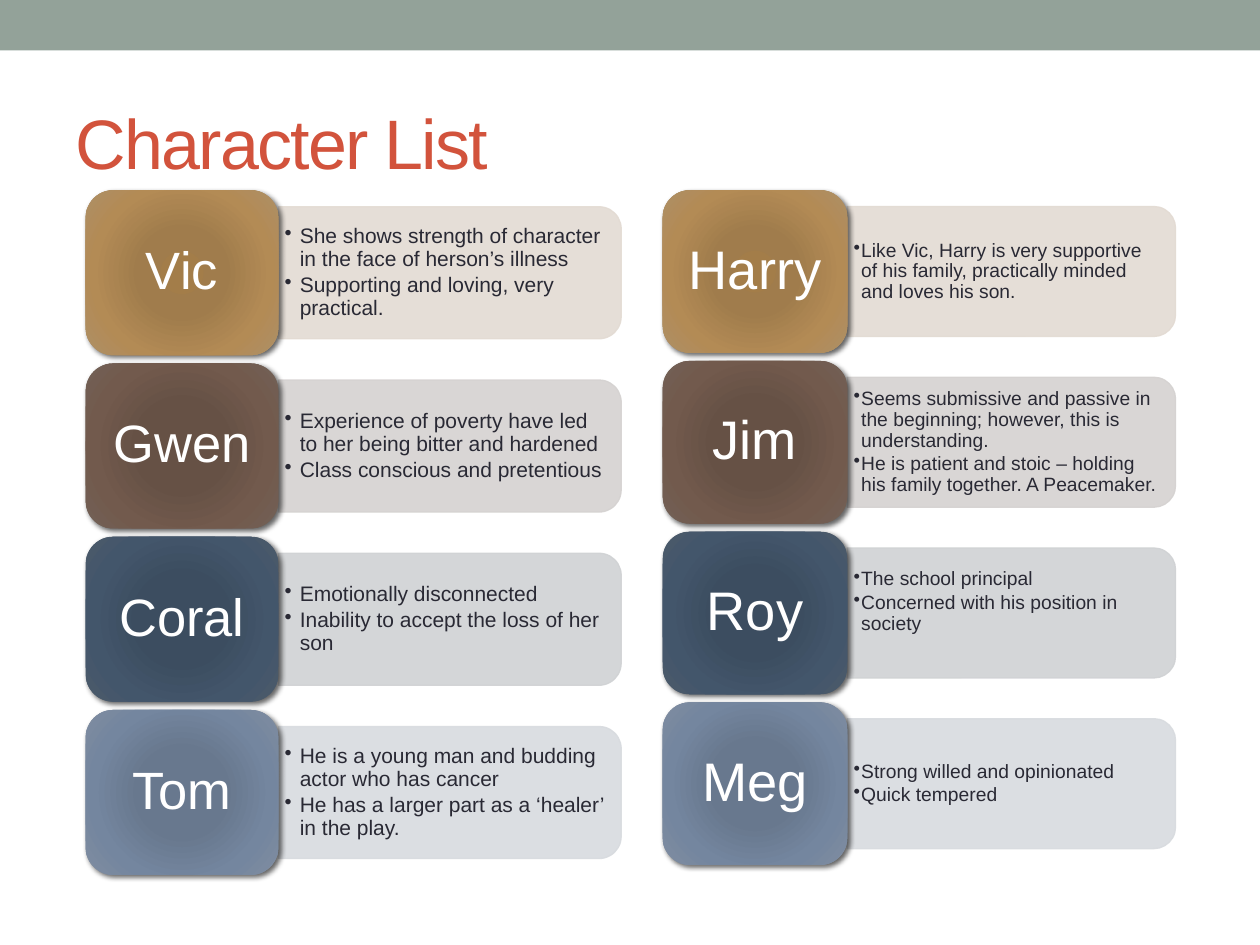
from lxml.etree import SubElement
from pptx import Presentation
from pptx.dml.color import RGBColor
from pptx.enum.shapes import MSO_SHAPE
from pptx.enum.text import MSO_ANCHOR, PP_ALIGN
from pptx.oxml import parse_xml
from pptx.oxml.ns import nsdecls, qn
from pptx.util import Inches, Pt

FONT = "Arial"
COLORS = {"band": "93A299", "title": "D2533C", "body": "292934",
          "name": "FFFFFF", "shadow": "000000"}
# One pair per row: panel colour, then the card's gradient from the centre out
ROWS = [
    ("E3DBD3", ("A37D49", "A07C4C", "B38B55", "AD8F67")),
    ("D5D2D1", ("685044", "665145", "725A4D", "726056")),
    ("D0D2D4", ("3B4D61", "3C4D60", "43566B", "4C5A6A")),
    ("D8DBDF", ("677790", "68788E", "74869F", "808DA0")),
]
STOPS = (0, 34, 70, 100)
CARD_SHARE = 0.36      # card width within a column
ROW_GAP = 1.05         # row pitch in card heights
PANEL_SHARE = 0.8      # panel height in card heights
GRID_TOP = 1.51

# Each column: its geometry, its type sizes and its characters
COLUMNS = [
    dict(left=0.68, width=4.25, pitch=1.375, name_size=30, body_size=12,
         indent=0.12, gap=2, people=[
             ("Vic", ["She shows strength of character in the face of herson’s illness",
                      "Supporting and loving, very practical."]),
             ("Gwen", ["Experience of poverty have led to her being bitter and hardened",
                       "Class conscious and pretentious"]),
             ("Coral", ["Emotionally disconnected",
                        "Inability to accept the loss of her son"]),
             ("Tom", ["He is a young man and budding actor who has cancer",
                      "He has a larger part as a ‘healer’ in the play."]),
         ]),
    dict(left=5.26, width=4.07, pitch=1.355, name_size=31, body_size=11,
         indent=0.06, gap=1.5, people=[
             ("Harry", ["Like Vic, Harry is very supportive of his family, "
                        "practically minded and loves his son."]),
             ("Jim", ["Seems submissive and passive in the beginning; however, "
                      "this is understanding.",
                      "He is patient and stoic – holding his family together. A Peacemaker."]),
             ("Roy", ["The school principal", "Concerned with his position in society"]),
             ("Meg", ["Strong willed and opinionated", "Quick tempered"]),
         ]),
]
RAISED = {"Roy": 0.18}  # extra bottom inset that lifts the text


def write(shape, lines, *, size, color, align=PP_ALIGN.LEFT, insets=(0.1, 0.05, 0.1, 0.05),
          spacing=None, gap=0, indent=None, tracking=None):
    """Fill a shape with paragraphs; an indent makes them bullets."""
    frame = shape.text_frame
    frame.word_wrap = True
    frame.vertical_anchor = MSO_ANCHOR.MIDDLE
    (frame.margin_left, frame.margin_top,
     frame.margin_right, frame.margin_bottom) = map(Inches, insets)
    for i, line in enumerate(lines):
        paragraph = frame.paragraphs[0] if i == 0 else frame.add_paragraph()
        paragraph.alignment = align
        paragraph.space_after = Pt(gap)
        if spacing:
            paragraph.line_spacing = spacing
        run = paragraph.add_run()
        run.text = line
        run.font.name, run.font.size = FONT, Pt(size)
        run.font.color.rgb = RGBColor.from_string(COLORS[color])
        if tracking:
            run._r.get_or_add_rPr().set("spc", str(tracking * 100))
        if indent:
            properties = paragraph._p.get_or_add_pPr()
            properties.set("marL", str(Inches(indent)))
            properties.set("indent", str(-Inches(indent)))
            SubElement(properties, qn("a:buChar")).set("char", "•")


def add_block(slide, kind, left, top, width, height):
    block = slide.shapes.add_shape(kind, *map(Inches, (left, top, width, height)))
    block.shadow.inherit = False
    block.line.fill.background()
    return block


def add_text(slide, left, top, width, height, lines, **style):
    box = slide.shapes.add_textbox(*map(Inches, (left, top, width, height)))
    write(box, lines, **style)


def add_panel(slide, left, middle, width, height, color):
    """A bar rounded on its right side: a top-rounded shape turned by 90°."""
    panel = add_block(slide, MSO_SHAPE.ROUND_2_SAME_RECTANGLE,
                      left + (width - height) / 2, middle - width / 2, height, width)
    panel.rotation = 90
    panel.line.width = Pt(0.75)
    for fill in (panel.fill, panel.line.fill):
        fill.solid()
        fill.fore_color.rgb = RGBColor.from_string(color)
    for tint in panel._element.spPr.iter(qn("a:srgbClr")):
        SubElement(tint, qn("a:alpha")).set("val", "90000")


def add_card(slide, left, top, width, height, name, shades, size):
    """A rounded card with a radial gradient, a soft shadow and a name."""
    card = add_block(slide, MSO_SHAPE.ROUNDED_RECTANGLE, left, top, width, height)
    card.fill.gradient()
    properties = card._element.spPr
    stops = "".join(f'<a:gs pos="{stop * 1000}"><a:srgbClr val="{shade}"/></a:gs>'
                    for stop, shade in zip(STOPS, shades))
    properties.replace(properties.find(qn("a:gradFill")), parse_xml(
        f'<a:gradFill {nsdecls("a")} rotWithShape="1"><a:gsLst>{stops}</a:gsLst>'
        '<a:path path="circle"><a:fillToRect l="100000" t="100000" r="100000" b="100000"/>'
        '</a:path></a:gradFill>'))
    properties.find(qn("a:effectLst")).append(parse_xml(
        f'<a:outerShdw {nsdecls("a")} blurRad="{Pt(3)}" dist="{Pt(2)}" dir="{45 * 60000}" '
        f'rotWithShape="0"><a:srgbClr val="{COLORS["shadow"]}"><a:alpha val="60000"/>'
        '</a:srgbClr></a:outerShdw>'))
    write(card, [name], size=size, color="name", align=PP_ALIGN.CENTER, spacing=0.9,
          insets=(0.12, 0.06, 0.12, 0.06))


def add_column(slide, left, width, pitch, name_size, body_size, indent, gap, people):
    card_width, card_height = width * CARD_SHARE, pitch / ROW_GAP
    panel_left, panel_width = left + card_width, width - card_width
    panel_height = card_height * PANEL_SHARE
    for row, ((name, traits), (tint, shades)) in enumerate(zip(people, ROWS)):
        top = GRID_TOP + row * pitch
        middle = top + card_height / 2
        text_height = panel_height - 0.1
        add_panel(slide, panel_left, middle, panel_width, panel_height, tint)
        add_text(slide, panel_left, middle - text_height / 2, panel_width - 0.05, text_height,
                 traits, size=body_size, color="body", spacing=0.9, gap=gap, indent=indent,
                 insets=(0.05, 0.03, 0.05, 0.03 + RAISED.get(name, 0)))
        add_card(slide, left, top, card_width, card_height, name, shades, name_size)


def main():
    deck = Presentation()
    deck.slide_width, deck.slide_height = Inches(10), Inches(7.5)
    slide = deck.slides.add_slide(deck.slide_layouts[6])

    # Top band and title
    band = add_block(slide, MSO_SHAPE.RECTANGLE, 0, 0, 10, 0.4)
    band.fill.solid()
    band.fill.fore_color.rgb = RGBColor.from_string(COLORS["band"])
    add_text(slide, 0.5, 0.58, 9, 1.08, ["Character List"],
             size=40, color="title", tracking=-1)

    # Two columns of characters
    for column in COLUMNS:
        add_column(slide, **column)
    deck.save("out.pptx")


if __name__ == "__main__":
    main()
